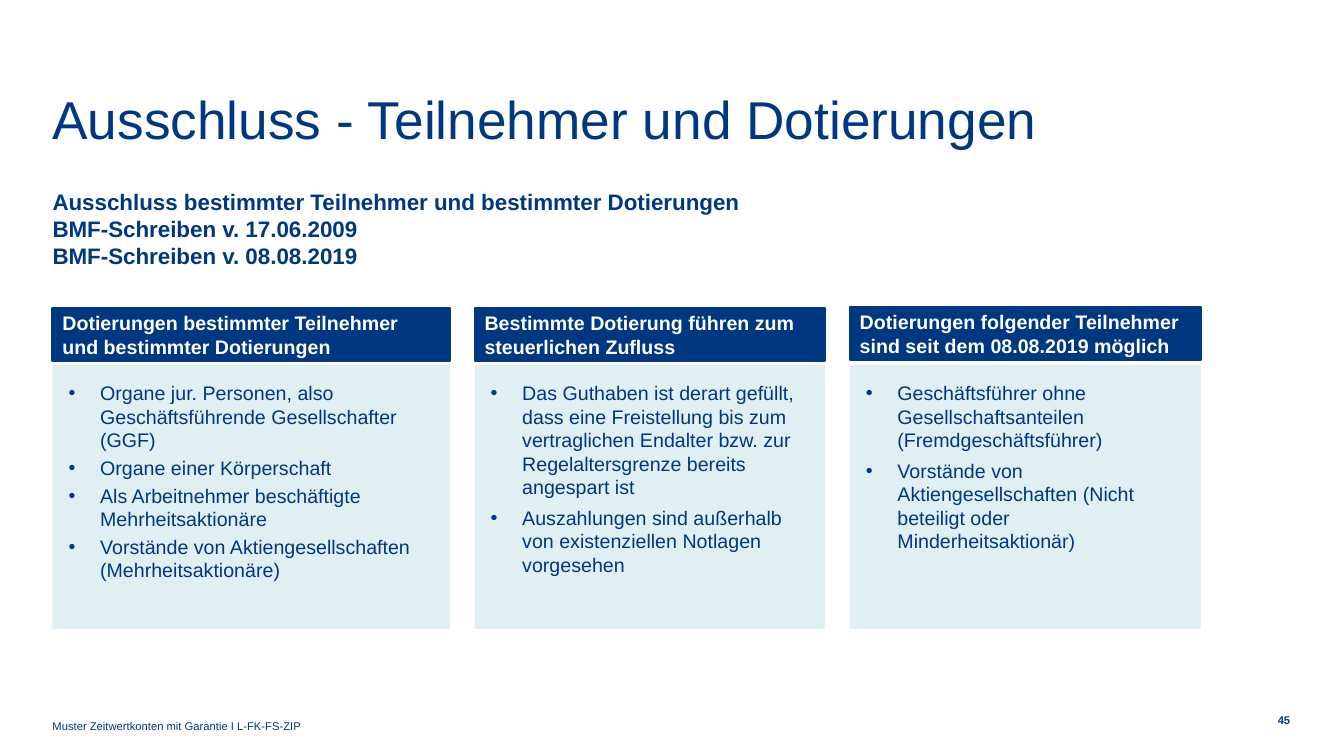
from dataclasses import dataclass

from lxml import etree
from pptx import Presentation
from pptx.dml.color import RGBColor
from pptx.enum.shapes import MSO_SHAPE
from pptx.enum.text import MSO_ANCHOR, PP_ALIGN
from pptx.oxml.ns import qn
from pptx.util import Pt

RECTANGLE = MSO_SHAPE.RECTANGLE
TOP, MIDDLE, BOTTOM = MSO_ANCHOR.TOP, MSO_ANCHOR.MIDDLE, MSO_ANCHOR.BOTTOM
LEFT, RIGHT = PP_ALIGN.LEFT, PP_ALIGN.RIGHT

COLORS = {"navy": "003781", "blue": "113388", "pale": "DFEFF2", "white": "FFFFFF"}
FONT = "Arial"
MARGIN = 37.5
HEADER_HEIGHT = 37.5
BODY_TOP, BODY_HEIGHT = 260.6, 188.6
BODY_INSET = 11.5
BULLET_INDENT = 22.5


@dataclass
class Label:
    left: float
    top: float
    width: float
    height: float
    lines: list[str]
    size: float
    bold: bool = False
    anchor: int = TOP
    alignment: int = LEFT
    line_spacing: float | Pt = 1.0


@dataclass
class Column:
    left: float
    width: float
    header_top: float
    header: str
    bullets: list[str]
    bullet_color: str
    space_before: float


LABELS = [
    Label(MARGIN, 69.1, 734.4, 73.4, ["Ausschluss - Teilnehmer und Dotierungen"], 38,
          line_spacing=Pt(38)),
    Label(MARGIN, 134.6, 833.8, 23,
          ["Ausschluss bestimmter Teilnehmer und bestimmter Dotierungen",
           "BMF-Schreiben v. 17.06.2009",
           "BMF-Schreiben v. 08.08.2019"], 16, bold=True),
    Label(MARGIN, 496.1, 734.4, 27.4, ["Muster Zeitwertkonten mit Garantie I L-FK-FS-ZIP"], 8,
          anchor=BOTTOM, line_spacing=0.9),
    Label(900.7, 508.3, 20.9, 11.5, ["45"], 8, bold=True, anchor=MIDDLE,
          alignment=RIGHT, line_spacing=Pt(10)),
]

COLUMNS = [
    Column(MARGIN, 283.7, 220.3,
           "Dotierungen bestimmter Teilnehmer und bestimmter Dotierungen",
           ["Organe jur. Personen, also Geschäftsführende Gesellschafter (GGF)",
            "Organe einer Körperschaft",
            "Als Arbeitnehmer beschäftigte Mehrheitsaktionäre",
            "Vorstände von Aktiengesellschaften (Mehrheitsaktionäre)"], "blue", 3),
    Column(339, 250.6, 220.3,
           "Bestimmte Dotierung führen zum steuerlichen Zufluss",
           ["Das Guthaben ist derart gefüllt, dass eine Freistellung bis zum "
            "vertraglichen Endalter bzw. zur Regelaltersgrenze bereits angespart ist",
            "Auszahlungen sind außerhalb von existenziellen Notlagen vorgesehen"], "navy", 5),
    Column(607, 250.6, 219.6,
           "Dotierungen folgender Teilnehmer sind seit dem 08.08.2019 möglich",
           ["Geschäftsführer ohne Gesellschaftsanteilen (Fremdgeschäftsführer)",
            "Vorstände von Aktiengesellschaften (Nicht beteiligt oder "
            "Minderheitsaktionär)"], "navy", 5),
]


def rgb(name: str) -> RGBColor:
    return RGBColor.from_string(COLORS[name])


def set_insets(text_frame, inset: float) -> None:
    text_frame.margin_left = text_frame.margin_right = Pt(inset)
    text_frame.margin_top = text_frame.margin_bottom = Pt(inset)


def write_lines(text_frame, lines: list[str], size: float, color: str,
                bold: bool = False, alignment: int = LEFT) -> None:
    text_frame.word_wrap = True
    text_frame.text = "\n".join(lines)
    for paragraph in text_frame.paragraphs:
        paragraph.alignment = alignment
        for run in paragraph.runs:
            run.font.name = FONT
            run.font.size = Pt(size)
            run.font.bold = bold
            run.font.color.rgb = rgb(color)


def add_label(slide, label: Label) -> None:
    box = slide.shapes.add_textbox(Pt(label.left), Pt(label.top),
                                   Pt(label.width), Pt(label.height))
    text_frame = box.text_frame
    set_insets(text_frame, 0)
    text_frame.vertical_anchor = label.anchor
    write_lines(text_frame, label.lines, label.size, "navy", label.bold, label.alignment)
    for paragraph in text_frame.paragraphs:
        paragraph.line_spacing = label.line_spacing


def add_rectangle(slide, left: float, top: float, width: float, height: float, fill: str):
    shape = slide.shapes.add_shape(RECTANGLE, Pt(left), Pt(top), Pt(width), Pt(height))
    shape.shadow.inherit = False
    shape.fill.solid()
    shape.fill.fore_color.rgb = rgb(fill)
    shape.line.fill.background()
    return shape


def add_bullet(paragraph, color: str) -> None:
    properties = paragraph._p.get_or_add_pPr()
    properties.set("marL", str(Pt(BULLET_INDENT)))
    properties.set("indent", str(-Pt(BULLET_INDENT)))
    bullet_color = etree.SubElement(properties, qn("a:buClr"))
    etree.SubElement(bullet_color, qn("a:srgbClr"), val=COLORS[color])
    etree.SubElement(properties, qn("a:buFont"), typeface=FONT)
    etree.SubElement(properties, qn("a:buChar"), char="•")


def add_column(slide, column: Column) -> None:
    # Body with bullets
    body = add_rectangle(slide, column.left, BODY_TOP, column.width, BODY_HEIGHT, "pale")
    text_frame = body.text_frame
    set_insets(text_frame, BODY_INSET)
    text_frame.vertical_anchor = TOP
    write_lines(text_frame, column.bullets, 14, "navy")
    for index, paragraph in enumerate(text_frame.paragraphs):
        if index:
            paragraph.space_before = Pt(column.space_before)
        add_bullet(paragraph, column.bullet_color)

    # Header bar
    header = add_rectangle(slide, column.left, column.header_top, column.width,
                           HEADER_HEIGHT, "navy")
    header.line.color.rgb = rgb("navy")
    header.line.width = Pt(1.5)
    header.text_frame.vertical_anchor = MIDDLE
    write_lines(header.text_frame, [column.header], 14, "white", bold=True)


def main() -> None:
    presentation = Presentation()
    presentation.slide_width = Pt(960)
    presentation.slide_height = Pt(540)
    slide = presentation.slides.add_slide(presentation.slide_layouts[6])

    # Title, subtitle, footer and page number
    for label in LABELS:
        add_label(slide, label)

    # Three columns
    for column in COLUMNS:
        add_column(slide, column)

    presentation.save("out.pptx")


if __name__ == "__main__":
    main()
